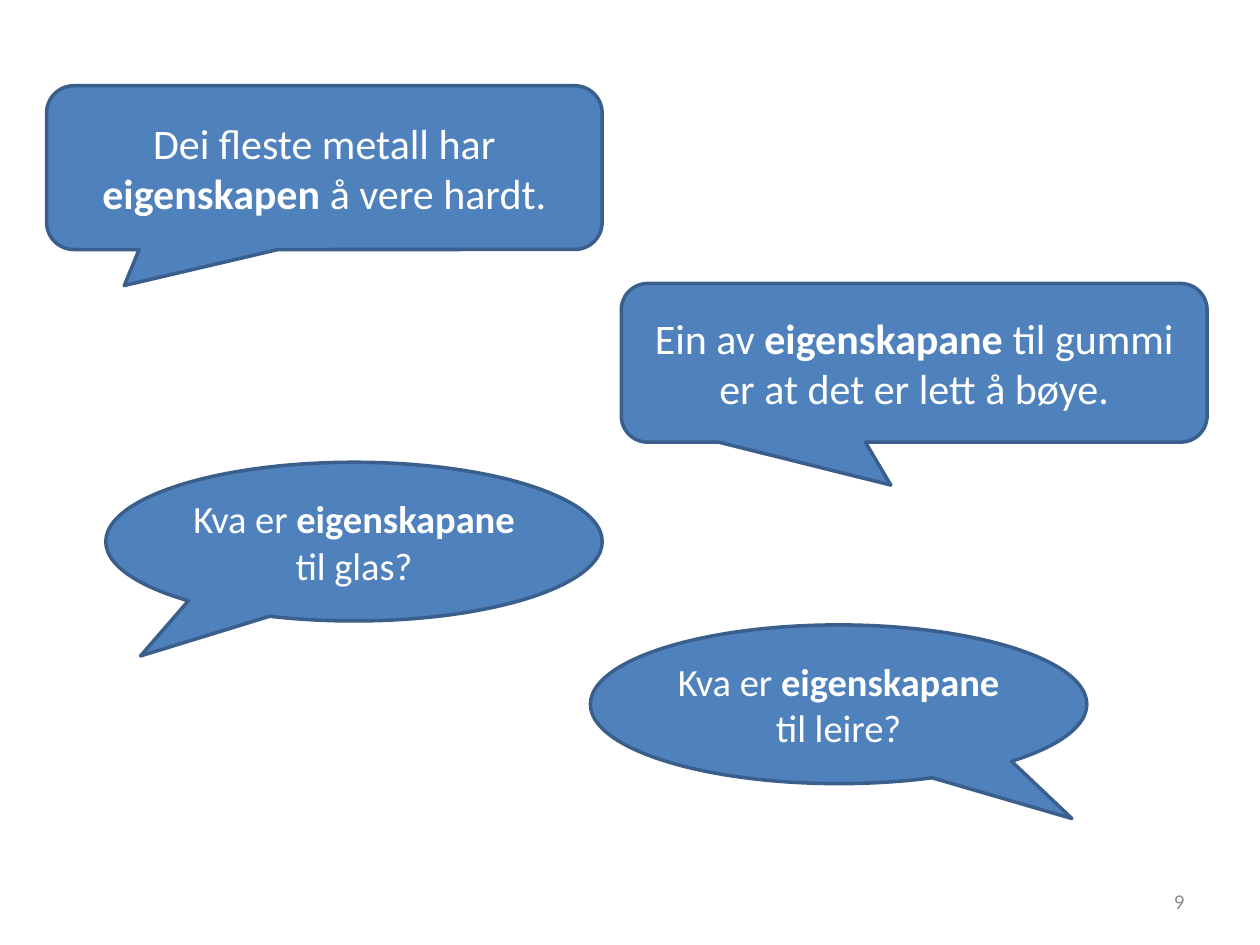
from pptx import Presentation
from pptx.dml.color import RGBColor
from pptx.enum.shapes import MSO_SHAPE
from pptx.enum.text import MSO_ANCHOR, PP_ALIGN
from pptx.util import Pt

COLORS = {"fill": "4F81BD", "line": "3A5F8C", "text": "FFFFFF", "number": "8C8C8C"}
FONT = "Calibri"


def color(name):
    return RGBColor.from_string(COLORS[name])


class SlideBuilder:
    def __init__(self, s):
        self.s = s

    def add_text(self, shape, runs, size, ink, align):
        tf = shape.text_frame
        tf.word_wrap = True
        tf.vertical_anchor = MSO_ANCHOR.MIDDLE
        p = tf.paragraphs[0]
        p.alignment = align
        for text, bold in runs:
            r = p.add_run()
            r.text = text
            r.font.name = FONT
            r.font.size = Pt(size)
            r.font.bold = bold
            r.font.color.rgb = color(ink)

    def callout(self, kind, box, tip, runs, size):
        sp = self.s.shapes.add_shape(kind, *(Pt(v) for v in box))
        sp.shadow.inherit = False
        sp.adjustments[0], sp.adjustments[1] = tip
        sp.fill.solid()
        sp.fill.fore_color.rgb = color("fill")
        sp.line.color.rgb = color("line")
        sp.line.width = Pt(2)
        self.add_text(sp, runs, size, "text", PP_ALIGN.CENTER)

    def statement(self, box, tip, runs):
        self.callout(MSO_SHAPE.ROUNDED_RECTANGULAR_CALLOUT, box, tip, runs, 24)

    def question(self, left, top, tip, ending):
        runs = [("Kva er ", False), ("eigenskapane ", True), (ending, False)]
        self.callout(MSO_SHAPE.OVAL_CALLOUT, (left, top, 283.7, 90.7), tip, runs, 22)

    def page_number(self, box, text):
        sp = self.s.shapes.add_textbox(*(Pt(v) for v in box))
        self.add_text(sp, [(text, False)], 12, "number", PP_ALIGN.RIGHT)


def main():
    prs = Presentation()
    prs.slide_width, prs.slide_height = Pt(720), Pt(540)
    slide = SlideBuilder(prs.slides.add_slide(prs.slide_layouts[6]))

    # Statements about materials
    slide.statement((26.6, 49, 317.5, 93.6), (-0.36, 0.72), [
        ("Dei fleste metall har ", False),
        ("eigenskapen", True),
        (" å vere hardt.", False),
    ])
    slide.statement((355, 162, 334.8, 90.7), (-0.04, 0.77), [
        ("Ein av ", False),
        ("eigenskapane", True),
        (" til gummi er at det er lett å bøye.", False),
    ])

    # Slide number
    slide.page_number((516, 500.5, 168, 28.8), "9")

    # Questions
    slide.question(60.5, 264.2, (-0.43, 0.72), "til glas?")
    slide.question(337.4, 357.1, (0.47, 0.72), "til leire?")

    prs.save("out.pptx")


if __name__ == "__main__":
    main()
